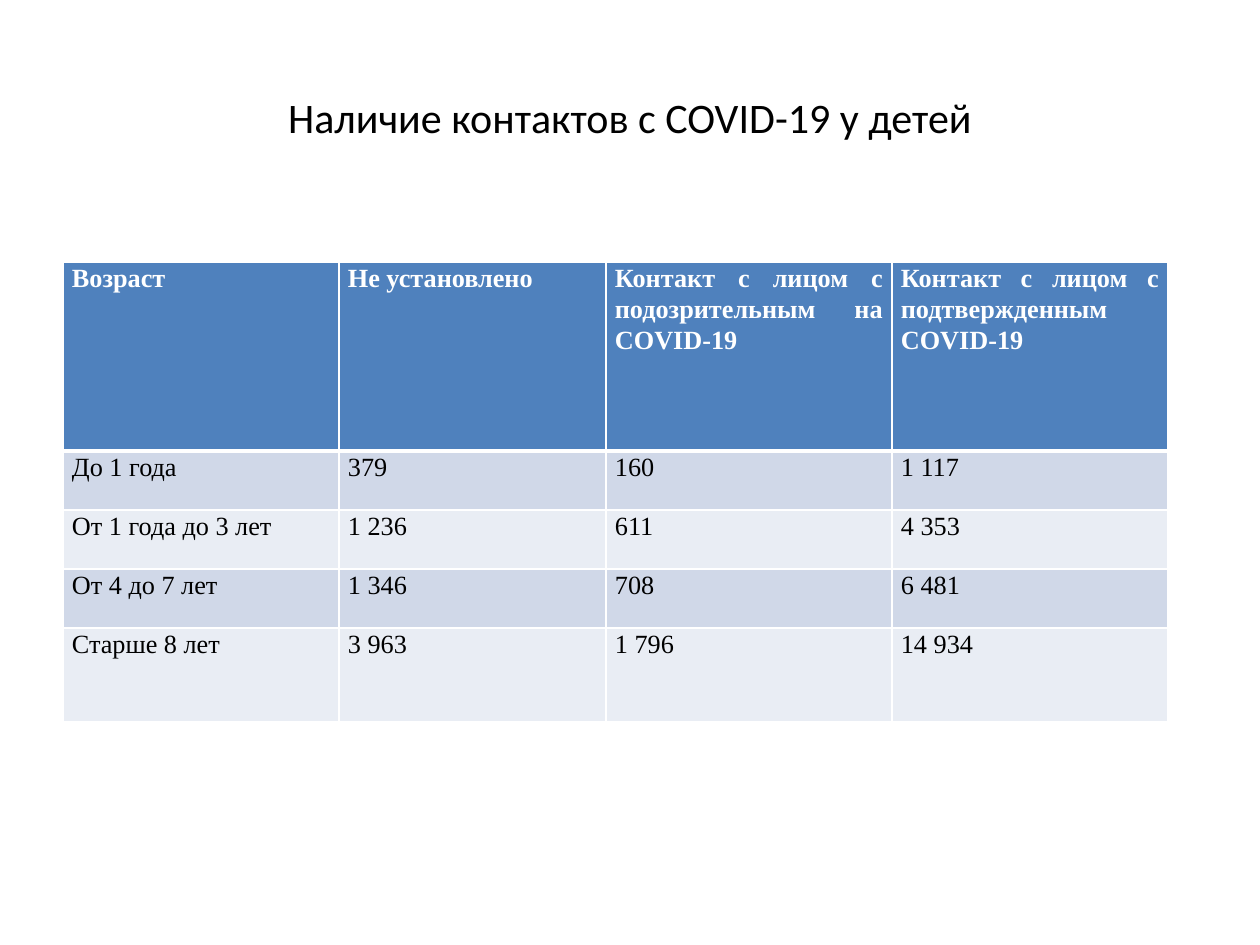
"""Build a slide with a table of children's COVID-19 contacts by age."""
import pptx
import pptx.dml.color
import pptx.enum.text
import pptx.oxml
import pptx.oxml.ns
import pptx.util

SCALE = 914400 // 126
COLORS = {"header": "4F81BD", "dark": "D0D8E8", "light": "E9EDF4",
          "white": "FFFFFF", "black": "000000"}
COLUMN_WIDTHS = [276, 267, 286, 276]
ROW_HEIGHTS = [189, 59, 59, 59, 94]
ROWS = [
    ["Возраст", "Не установлено", "Контакт с лицом с подозрительным на COVID-19",
     "Контакт с лицом с подтвержденным COVID-19"],
    ["До 1 года", "379", "160", "1 117"],
    ["От 1 года до 3 лет", "1 236", "611", "4 353"],
    ["От 4 до 7 лет", "1 346", "708", "6 481"],
    ["Старше 8 лет", "3 963", "1 796", "14 934"],
]


def style_font(font, name, size, color, bold=False):
    font.name = name
    font.size = pptx.util.Pt(size)
    font.bold = bold
    font.color.rgb = pptx.dml.color.RGBColor.from_string(COLORS[color])


def add_borders(cell, bottom_width):
    widths = {"lnL": 1, "lnR": 1, "lnT": 1, "lnB": bottom_width}
    for position, (side, width) in enumerate(widths.items()):
        border = pptx.oxml.parse_xml(
            f'<a:{side} {pptx.oxml.ns.nsdecls("a")} w="{pptx.util.Pt(width)}">'
            f'<a:solidFill><a:srgbClr val="{COLORS["white"]}"/></a:solidFill></a:{side}>')
        cell._tc.get_or_add_tcPr().insert(position, border)


deck = pptx.Presentation()
deck.slide_width = 1260 * SCALE
deck.slide_height = 945 * SCALE
page = deck.slides.add_slide(deck.slide_layouts[6])

title_box = page.shapes.add_textbox(63 * SCALE, 38 * SCALE, 1134 * SCALE, 158 * SCALE)
title_box.text_frame.word_wrap = True
title_box.text_frame.vertical_anchor = pptx.enum.text.MSO_ANCHOR.MIDDLE
title = title_box.text_frame.paragraphs[0]
title.text = "Наличие контактов с COVID-19 у детей"
title.alignment = pptx.enum.text.PP_ALIGN.CENTER
style_font(title.font, "Calibri", 24, "black")

table = page.shapes.add_table(
    len(ROWS), len(COLUMN_WIDTHS), 63 * SCALE, 262 * SCALE,
    sum(COLUMN_WIDTHS) * SCALE, sum(ROW_HEIGHTS) * SCALE).table
for column, width in zip(table.columns, COLUMN_WIDTHS):
    column.width = width * SCALE
for row, height in zip(table.rows, ROW_HEIGHTS):
    row.height = height * SCALE

for row_number, texts in enumerate(ROWS):
    is_header = row_number == 0
    fill = "header" if is_header else "dark" if row_number % 2 else "light"
    for column_number, text in enumerate(texts):
        cell = table.cell(row_number, column_number)
        cell.margin_left = cell.margin_right = 9 * SCALE
        cell.margin_top = cell.margin_bottom = 0
        cell.fill.solid()
        cell.fill.fore_color.rgb = pptx.dml.color.RGBColor.from_string(COLORS[fill])
        add_borders(cell, 3 if is_header else 1)
        para = cell.text_frame.paragraphs[0]
        para.text = text
        para.alignment = pptx.enum.text.PP_ALIGN.JUSTIFY
        para.line_spacing = 1.07
        style_font(para.font, "Times New Roman", 15,
                   "white" if is_header else "black", is_header)

deck.save("out.pptx")
